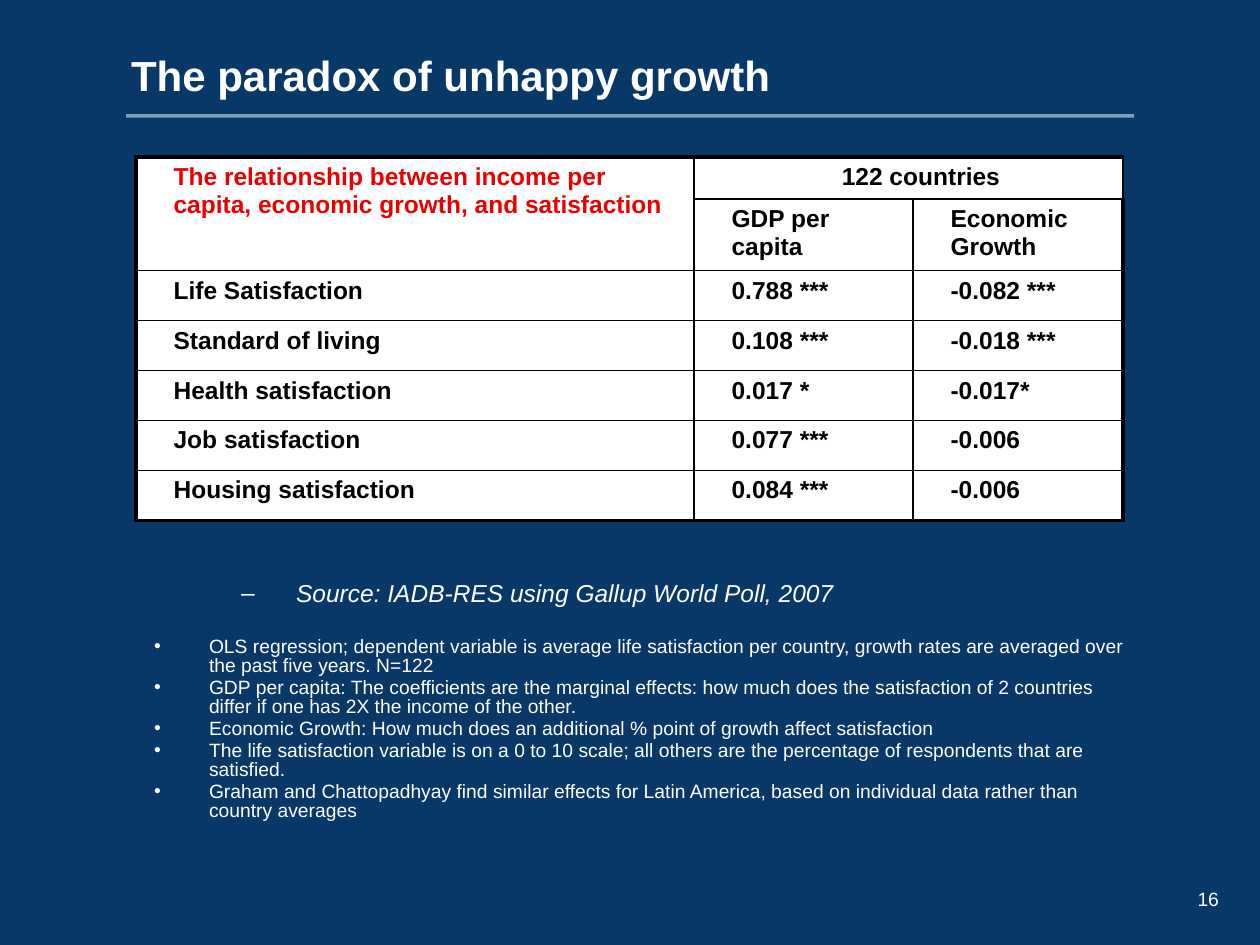
from lxml import etree
from pptx import Presentation
from pptx.dml.color import RGBColor
from pptx.enum import shapes, text
from pptx.oxml.ns import qn
from pptx.util import Emu, Pt

TITLE = "The paradox of unhappy growth"
PAGE = "16"
ROWS = [
    ("The relationship between income per capita, economic growth, and satisfaction", "122 countries", ""),
    ("", "GDP per capita", "Economic Growth"),
    ("Life Satisfaction", "0.788 ***", "-0.082 ***"),
    ("Standard of living", "0.108 ***", "-0.018 ***"),
    ("Health satisfaction", "0.017 *", "-0.017*"),
    ("Job satisfaction", "0.077 ***", "-0.006"),
    ("Housing satisfaction", "0.084 ***", "-0.006"),
]
SOURCE = "Source: IADB-RES using Gallup World Poll, 2007"
NOTES = [
    "OLS regression; dependent variable is average life satisfaction per country, growth rates are averaged over the past five years. N=122",
    "GDP per capita: The coefficients are the marginal effects: how much does the satisfaction of 2 countries differ if one has 2X the income of the other.",
    "Economic Growth: How much does an additional % point of growth affect satisfaction",
    "The life satisfaction variable is on a 0 to 10 scale; all others are the percentage of respondents that are satisfied.",
    "Graham and Chattopadhyay find similar effects for Latin America, based on individual data rather than country averages",
]
COL_WIDTHS = [558, 219, 210]
ROW_HEIGHTS = [40, 67] + [50] * 5
NAVY, WHITE, BLACK, RED = "083868", "FFFFFF", "000000", "EA0000"


def px(n):
    return Emu(round(n * 914400 / 126))


def rgb(value):
    return RGBColor.from_string(value)


def style(p, size, color, bold=False, italic=False):
    for r in p.runs:
        f = r.font
        f.name, f.size, f.bold, f.italic = "Arial", Pt(size), bold, italic
        f.color.rgb = rgb(color)


def indent(p, left, first=0, bullet=None):
    pPr = p._p.get_or_add_pPr()
    pPr.set("marL", str(px(left)))
    pPr.set("indent", str(px(first)))
    if bullet:
        clr = etree.SubElement(pPr, qn("a:buClr"))
        etree.SubElement(clr, qn("a:srgbClr"), val=WHITE)
        etree.SubElement(pPr, qn("a:buFont"), typeface="Arial")
        etree.SubElement(pPr, qn("a:buChar"), char=bullet)


def textbox(s, x, y, w, h, side=5, top=5):
    tf = s.shapes.add_textbox(px(x), px(y), px(w), px(h)).text_frame
    tf.word_wrap = True
    tf.margin_left = tf.margin_right = px(side)
    tf.margin_top, tf.margin_bottom = px(top), px(5)
    return tf


def borders(cell, row, col):
    outer = {"L": col == 0, "R": col == len(COL_WIDTHS) - 1,
             "T": row == 0, "B": row == len(ROWS) - 1}
    tcPr = cell._tc.get_or_add_tcPr()
    for side, thick in outer.items():
        ln = etree.SubElement(tcPr, qn("a:ln" + side), w=str(Pt(2.25 if thick else 1)))
        fill = etree.SubElement(ln, qn("a:solidFill"))
        etree.SubElement(fill, qn("a:srgbClr"), val=BLACK)


def add_rule(s):
    line = s.shapes.add_connector(shapes.MSO_CONNECTOR.STRAIGHT, px(126), px(116), px(1134), px(116))
    line.line.width = Pt(2)
    line.line.color.rgb = rgb(WHITE)
    spPr = line._element.spPr
    clr = spPr.find(".//" + qn("a:srgbClr"))
    etree.SubElement(clr, qn("a:alpha"), val="50000")
    etree.SubElement(spPr, qn("a:effectLst"))


def add_results(s):
    frame = s.shapes.add_table(len(ROWS), len(COL_WIDTHS), px(136), px(157),
                               px(sum(COL_WIDTHS)), px(sum(ROW_HEIGHTS)))
    table = frame.table
    table.first_row = table.horz_banding = False
    for column, w in zip(table.columns, COL_WIDTHS):
        column.width = px(w)
    for row, h in zip(table.rows, ROW_HEIGHTS):
        row.height = px(h)
    table.cell(0, 0).merge(table.cell(1, 0))
    table.cell(0, 1).merge(table.cell(0, 2))
    for i, values in enumerate(ROWS):
        for j, value in enumerate(values):
            cell = table.cell(i, j)
            borders(cell, i, j)
            cell.fill.solid()
            cell.fill.fore_color.rgb = rgb(WHITE)
            if value:
                cell.text = value
                p = cell.text_frame.paragraphs[0]
                indent(p, 25)
                style(p, 14, RED if i == j == 0 else BLACK, bold=True)
    table.cell(0, 1).text_frame.paragraphs[0].alignment = text.PP_ALIGN.CENTER


def add_notes(s):
    tf = textbox(s, 123, 520, 1014, 352, top=64)
    p = tf.paragraphs[0]
    p.text = SOURCE
    indent(p, 168, -55, "–")
    p.line_spacing = 0.8
    style(p, 14, WHITE, italic=True)
    for i, note in enumerate(NOTES):
        p = tf.add_paragraph()
        p.text = note
        indent(p, 81, -55, "•")
        p.line_spacing = 0.8
        p.space_before = Pt(2.2 if i else 18)
        style(p, 11, WHITE)


def main():
    prs = Presentation()
    prs.slide_width, prs.slide_height = px(1260), px(945)
    s = prs.slides.add_slide(prs.slide_layouts[6])
    s.background.fill.solid()
    s.background.fill.fore_color.rgb = rgb(NAVY)
    add_rule(s)

    tf = textbox(s, 1176, 882, 52, 32, side=9)
    tf.text = PAGE
    tf.paragraphs[0].alignment = text.PP_ALIGN.RIGHT
    style(tf.paragraphs[0], 11, WHITE)

    tf = textbox(s, 126, 42, 1014, 63)
    tf.vertical_anchor = text.MSO_ANCHOR.BOTTOM
    tf.text = TITLE
    style(tf.paragraphs[0], 24, WHITE, bold=True)

    add_notes(s)
    add_results(s)
    prs.save("out.pptx")


if __name__ == "__main__":
    main()
